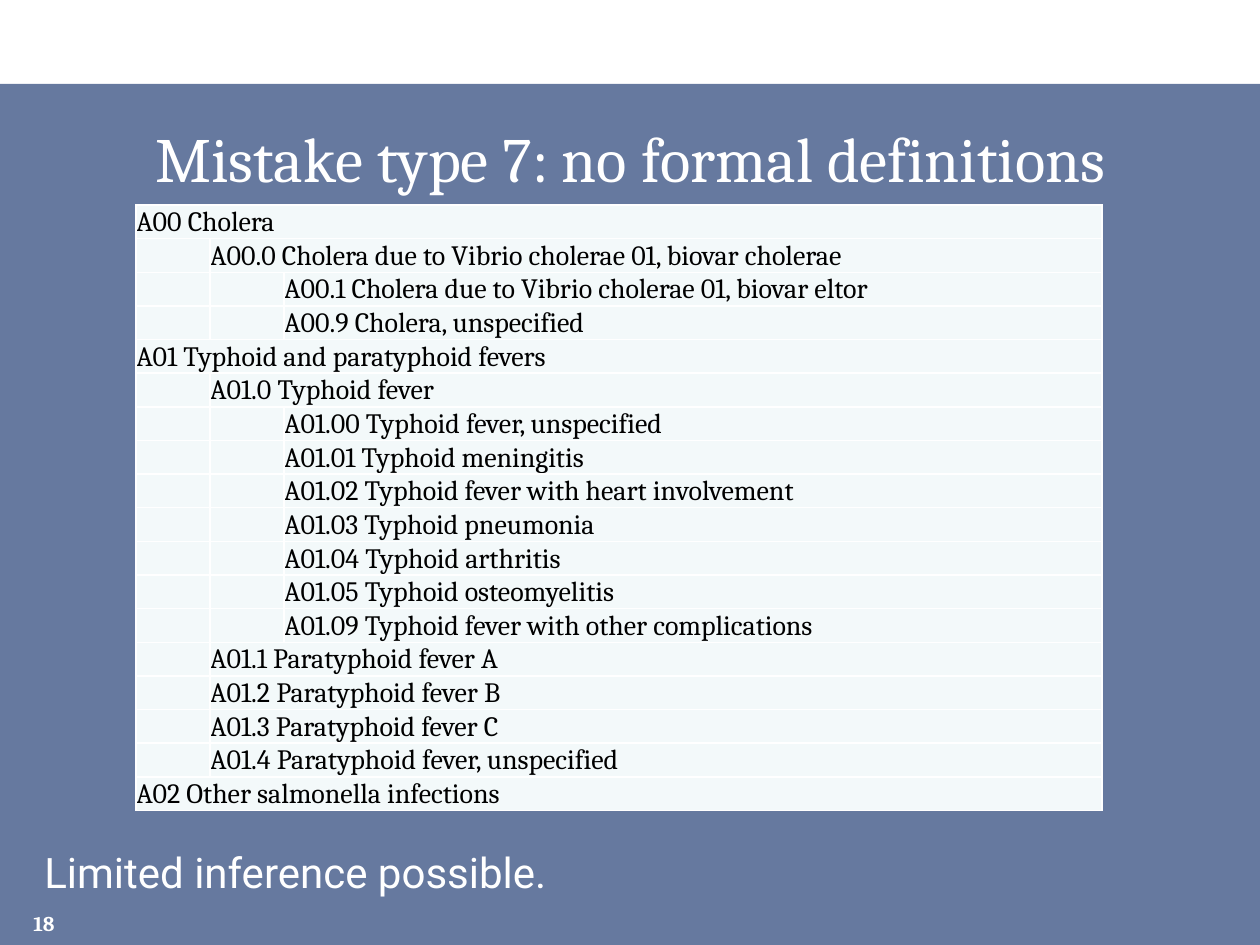
from typing import NamedTuple

from lxml import etree
from pptx import Presentation
from pptx import util as u
from pptx.dml.color import RGBColor
from pptx.enum import shapes, text
from pptx.oxml.ns import qn

EMU_PER_PX = 914400 / 126
SERIF, SANS = "Cambria", "Roboto"
WHITE, BLACK, NAVY, PALE = "FFFFFF", "000000", "002060", "F3F9FA"
COLUMN_WIDTHS = (74, 74, 818)
ROW_HEIGHT = 32
CODE_SIZE = 16


class Code(NamedTuple):
    level: int
    label: str


CODES = [
    Code(0, "A00 Cholera"),
    Code(1, "A00.0 Cholera due to Vibrio cholerae 01, biovar cholerae"),
    Code(2, "A00.1 Cholera due to Vibrio cholerae 01, biovar eltor"),
    Code(2, "A00.9 Cholera, unspecified"),
    Code(0, "A01 Typhoid and paratyphoid fevers"),
    Code(1, "A01.0 Typhoid fever"),
    Code(2, "A01.00 Typhoid fever, unspecified"),
    Code(2, "A01.01 Typhoid meningitis"),
    Code(2, "A01.02 Typhoid fever with heart involvement"),
    Code(2, "A01.03 Typhoid pneumonia"),
    Code(2, "A01.04 Typhoid arthritis"),
    Code(2, "A01.05 Typhoid osteomyelitis"),
    Code(2, "A01.09 Typhoid fever with other complications"),
    Code(1, "A01.1 Paratyphoid fever A"),
    Code(1, "A01.2 Paratyphoid fever B"),
    Code(1, "A01.3 Paratyphoid fever C"),
    Code(1, "A01.4 Paratyphoid fever, unspecified"),
    Code(0, "A02 Other salmonella infections"),
]


def px(length: int) -> u.Emu:
    return u.Emu(round(length * EMU_PER_PX))


def color(value: str) -> RGBColor:
    return RGBColor.from_string(value)


def write(para, words: str, *, size: int, font: str = SERIF, fill: str = WHITE,
          bold: bool = False, align=text.PP_ALIGN.LEFT) -> None:
    para.alignment = align
    span = para.add_run()
    span.text = words
    span.font.name = font
    span.font.size = u.Pt(size)
    span.font.bold = bold
    span.font.color.rgb = color(fill)


def add_text(page, left: int, top: int, width: int, height: int, words: str, *,
             anchor=text.MSO_ANCHOR.MIDDLE, **style) -> None:
    box = page.shapes.add_textbox(px(left), px(top), px(width), px(height))
    box.text_frame.word_wrap = True
    box.text_frame.vertical_anchor = anchor
    write(box.text_frame.paragraphs[0], words, **style)


def add_backdrop(page) -> None:
    box = page.shapes.add_shape(shapes.MSO_SHAPE.RECTANGLE,
                                0, px(84), px(1260), px(861))
    box.shadow.inherit = False
    box.line.fill.background()
    box.fill.solid()
    box.fill.fore_color.rgb = color(NAVY)
    tint = box.fill._xPr.find(".//" + qn("a:srgbClr"))
    etree.SubElement(tint, qn("a:alpha"), val="60000")


def format_cell(cell) -> None:
    """Give the cell white borders, a pale fill and no margins."""
    cell.margin_left = cell.margin_right = 0
    cell.margin_top = cell.margin_bottom = 0
    cell.vertical_anchor = text.MSO_ANCHOR.BOTTOM
    properties = cell._tc.get_or_add_tcPr()
    for side in ("lnL", "lnR", "lnT", "lnB"):
        line = etree.SubElement(properties, qn(f"a:{side}"), w=str(u.Pt(1)))
        solid = etree.SubElement(line, qn("a:solidFill"))
        etree.SubElement(solid, qn("a:srgbClr"), val=WHITE)
    cell.fill.solid()
    cell.fill.fore_color.rgb = color(PALE)
    # Empty cells would otherwise stretch the row to the default text size.
    end = cell.text_frame.paragraphs[0]._p.get_or_add_endParaRPr()
    end.set("sz", str(CODE_SIZE * 100))


def add_codes(page, left: int, top: int, codes: list[Code]) -> None:
    frame = page.shapes.add_table(
        len(codes), len(COLUMN_WIDTHS), px(left), px(top),
        px(sum(COLUMN_WIDTHS)), px(ROW_HEIGHT * len(codes)))
    table = frame.table
    table.first_row = table.horz_banding = False
    for column, width in zip(table.columns, COLUMN_WIDTHS):
        column.width = px(width)
    last = len(COLUMN_WIDTHS) - 1
    for index, code in enumerate(codes):
        table.rows[index].height = px(ROW_HEIGHT)
        for column in range(last + 1):
            format_cell(table.cell(index, column))
        cell = table.cell(index, code.level)
        if code.level < last:
            cell.merge(table.cell(index, last))
        write(cell.text_frame.paragraphs[0], code.label,
              size=CODE_SIZE, fill=BLACK)


def main() -> None:
    deck = Presentation()
    deck.slide_width, deck.slide_height = px(1260), px(945)
    page = deck.slides.add_slide(deck.slide_layouts[6])
    add_backdrop(page)
    add_text(page, 32, 105, 1197, 105, "Mistake type 7: no formal definitions",
             size=36, align=text.PP_ALIGN.CENTER)
    add_text(page, 32, 840, 1197, 73, "Limited inference possible.",
             size=24, font=SANS, anchor=text.MSO_ANCHOR.TOP)
    add_text(page, 4, 903, 63, 40, "18", size=12, bold=True,
             align=text.PP_ALIGN.RIGHT)
    add_codes(page, 136, 205, CODES)
    deck.save("out.pptx")


if __name__ == "__main__":
    main()
